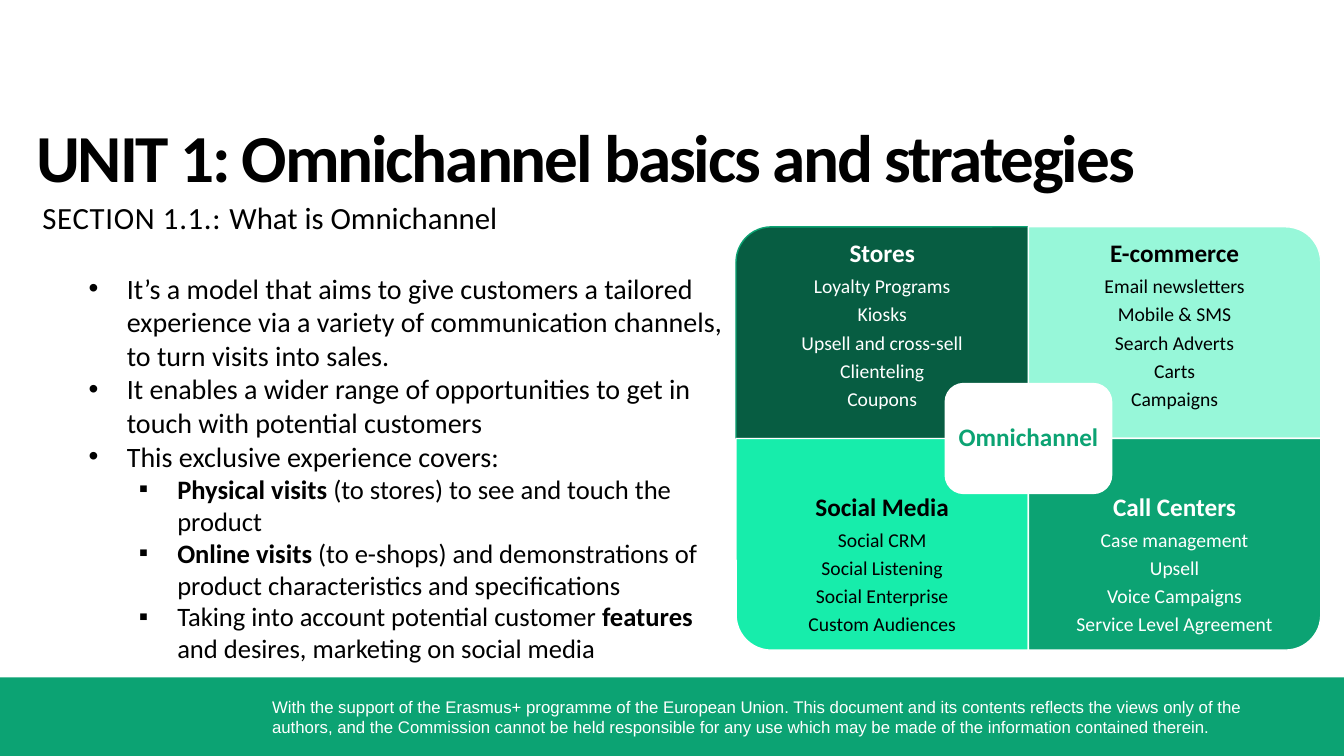
from lxml import etree
from pptx import Presentation
from pptx.dml.color import RGBColor
from pptx.enum.shapes import MSO_SHAPE
from pptx.enum.text import MSO_ANCHOR, PP_ALIGN
from pptx.oxml.ns import qn
from pptx.util import Inches, Pt

BLACK = RGBColor(0, 0, 0)
WHITE = RGBColor(255, 255, 255)
GREEN = RGBColor(0x0C, 0xA3, 0x73)
DARK = RGBColor(0x07, 0x5D, 0x42)
PALE = RGBColor(0x97, 0xF7, 0xD9)
MINT = RGBColor(0x17, 0xED, 0xAB)
TOP, MIDDLE, BOTTOM = MSO_ANCHOR.TOP, MSO_ANCHOR.MIDDLE, MSO_ANCHOR.BOTTOM
LEFT, CENTER = PP_ALIGN.LEFT, PP_ALIGN.CENTER
RECT, ROUND = MSO_SHAPE.RECTANGLE, MSO_SHAPE.ROUNDED_RECTANGLE
CORNER = MSO_SHAPE.ROUND_1_RECTANGLE

FOOTER = (
    "With the support of the Erasmus+ programme of the European Union. "
    "This document and its contents reflects the views only of the authors, "
    "and the Commission cannot be held responsible for any use which may be "
    "made of the information contained therein."
)
TITLE = "UNIT 1: Omnichannel basics and strategies"
SECTION = [("SECTION 1.1.: ", 0.5), ("What is Omnichannel", 0)]
POINTS = [
    (0, [("It’s a model that aims to give customers a tailored experience via a "
          "variety of communication channels, to turn visits into sales.", False)]),
    (0, [("It enables a wider range of opportunities to get in touch with "
          "potential customers", False)]),
    (0, [("This exclusive experience covers:", False)]),
    (1, [("Physical visits ", True),
         ("(to stores) to see and touch the product", False)]),
    (1, [("Online visits ", True),
         ("(to e-shops) and demonstrations of product characteristics and "
          "specifications", False)]),
    (1, [("Taking into account potential customer ", False), ("features", True),
         (" and desires, marketing on social media", False)]),
]
LEVELS = [("•", 0.38, 20), ("▪", 0.88, 19)]
PANELS = [
    ("Stores", ["Loyalty Programs", "Kiosks", "Upsell and cross-sell",
                "Clienteling", "Coupons"], DARK, GREEN, WHITE, 270),
    ("E-commerce", ["Email newsletters", "Mobile & SMS", "Search Adverts",
                    "Carts", "Campaigns"], PALE, WHITE, BLACK, 0),
    ("Social Media", ["Social CRM", "Social Listening", "Social Enterprise",
                      "Custom Audiences"], MINT, WHITE, BLACK, 180),
    ("Call Centers", ["Case management", "Upsell", "Voice Campaigns",
                      "Service Level Agreement"], GREEN, WHITE, WHITE, 90),
]
HUB = "Omnichannel"
GRID_X, GRID_Y, CELL_W, CELL_H, TEXT_H = 7.3, 2.25, 2.9, 2.1, 1.58
HUB_W, HUB_H = 1.65, 1.09

deck = Presentation()
deck.slide_width, deck.slide_height = Inches(13.33), Inches(7.5)
slide = deck.slides.add_slide(deck.slide_layouts[6])


def add_block(kind, x, y, w, h, fill, line=None):
    block = slide.shapes.add_shape(kind, Inches(x), Inches(y), Inches(w), Inches(h))
    block.shadow.inherit = False
    block.fill.solid()
    block.fill.fore_color.rgb = fill
    if line is None:
        block.line.fill.background()
    else:
        block.line.color.rgb = line
        block.line.width = Pt(1)
    return block


def add_frame(x, y, w, h, pad=(0.1, 0.05), anchor=TOP):
    box = slide.shapes.add_textbox(Inches(x), Inches(y), Inches(w), Inches(h))
    frame = box.text_frame
    frame.word_wrap = True
    frame.vertical_anchor = anchor
    frame.margin_left = frame.margin_right = Inches(pad[0])
    frame.margin_top = frame.margin_bottom = Inches(pad[1])
    return frame


def add_run(para, text, size, color=BLACK, bold=False, face="Calibri", gap=0):
    run = para.add_run()
    run.text = text
    run.font.name = face
    run.font.size = Pt(size)
    run.font.bold = bold
    run.font.color.rgb = color
    if gap:
        run.font._element.set("spc", str(int(gap * 100)))


def next_para(frame, index, align=LEFT):
    para = frame.add_paragraph() if index else frame.paragraphs[0]
    para.alignment = align
    return para


def add_bullet(para, mark, indent):
    props = para._p.get_or_add_pPr()
    props.set("marL", str(Inches(indent)))
    props.set("indent", str(Inches(-0.38)))
    etree.SubElement(props, qn("a:buFont")).set("typeface", "Arial")
    etree.SubElement(props, qn("a:buChar")).set("char", mark)


def add_list(frame, head, items, color):
    for index, text in enumerate([head] + items):
        para = next_para(frame, index, CENTER)
        para.line_spacing = 0.9
        size = 14 if index else 18
        para.space_after = Pt(round(size * 0.35, 1))
        add_run(para, text, size, color, not index)


add_block(RECT, 0, 6.72, 13.33, 0.78, GREEN)
foot = add_frame(2.6, 6.86, 10.42, 0.5)
add_run(foot.paragraphs[0], FOOTER, 12, WHITE, face="Arial")

title = add_frame(0.36, 1.13, 11.23, 0.82, (0, 0.01))
add_run(title.paragraphs[0], TITLE, 48, bold=True, gap=-1.5)

section = add_frame(0.42, 1.95, 5.29, 0.39, (0, 0.02))
for text, gap in SECTION:
    add_run(section.paragraphs[0], text, 22, gap=gap)

body = add_frame(0.78, 2.64, 6.52, 4.04)
for index, (level, runs) in enumerate(POINTS):
    mark, indent, size = LEVELS[level]
    para = next_para(body, index)
    para.level = level
    add_bullet(para, mark, indent)
    for text, bold in runs:
        add_run(para, text, size, bold=bold)

for index, (head, items, fill, line, color, turn) in enumerate(PANELS):
    row, col = divmod(index, 2)
    x, y = GRID_X + col * CELL_W, GRID_Y + row * CELL_H
    w, h = (CELL_H, CELL_W) if turn % 180 else (CELL_W, CELL_H)
    panel = add_block(CORNER, x + (CELL_W - w) / 2, y + (CELL_H - h) / 2,
                      w, h, fill, line)
    panel.rotation = turn
    top = y + row * (CELL_H - TEXT_H)
    frame = add_frame(x, top, CELL_W, TEXT_H, (0.14, 0.14), BOTTOM if row else TOP)
    add_list(frame, head, items, color)

x, y = GRID_X + CELL_W - HUB_W / 2, GRID_Y + CELL_H - HUB_H / 2
add_block(ROUND, x, y, HUB_W, HUB_H, WHITE, WHITE)
add_list(add_frame(x, y, HUB_W, HUB_H, (0.07, 0.07), MIDDLE), HUB, [], GREEN)

deck.save("out.pptx")
